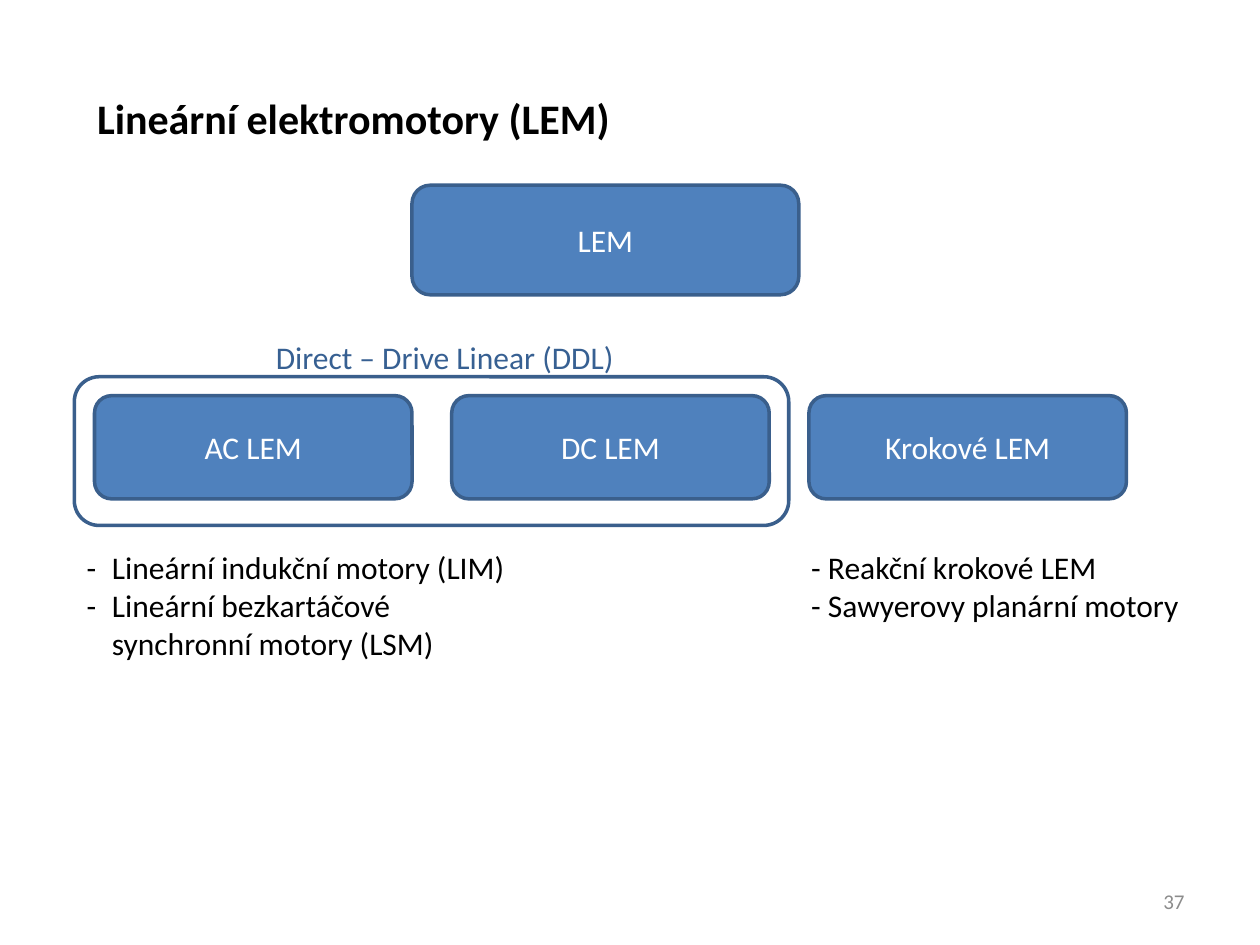
from pptx import Presentation, util as u
from pptx.dml.color import RGBColor
from pptx.enum import shapes, text

WIDE, HIGH = u.Inches(10), u.Inches(7.5)
FONT = "Calibri"
BLUE, EDGE, LABEL = "4F81BD", "3A5F8C", "376092"
BLACK, WHITE, GREY = "000000", "FFFFFF", "8C8C8C"
LEFT, STEP = 7.5, 28.35
MID = text.MSO_ANCHOR.MIDDLE
ALIGN = text.PP_ALIGN


def tint(code):
    return RGBColor.from_string(code)


def area(x, y, w, h):
    return (round(WIDE * x / 100), round(HIGH * y / 100),
            round(WIDE * w / 100), round(HIGH * h / 100))


def apply(item, form):
    for name, value in form.items():
        setattr(item, name, value)


def write(shape, lines, size=18, color=BLACK, bold=False,
          align=ALIGN.LEFT, anchor=text.MSO_ANCHOR.TOP, hang=0):
    frame = shape.text_frame
    apply(frame, {"word_wrap": True, "auto_size": text.MSO_AUTO_SIZE.NONE,
                  "vertical_anchor": anchor})
    for i, line in enumerate(lines):
        para = frame.add_paragraph() if i else frame.paragraphs[0]
        para.alignment = align
        if hang:
            props = para._p.get_or_add_pPr()
            props.set("marL", str(u.Inches(hang)))
            props.set("indent", str(-u.Inches(hang)))
        run = para.add_run()
        run.text = line
        apply(run.font, {"name": FONT, "size": u.Pt(size), "bold": bold})
        run.font.color.rgb = tint(color)


def head(slide, line, spot):
    title = slide.shapes.title
    apply(title, dict(zip(("left", "top", "width", "height"), area(*spot))))
    write(title, [line], size=24, bold=True)


def note(slide, lines, spot, **form):
    write(slide.shapes.add_textbox(*area(*spot)), lines, **form)


def box(slide, spot, label=None):
    shape = slide.shapes.add_shape(
        shapes.MSO_SHAPE.ROUNDED_RECTANGLE, *area(*spot))
    shape.shadow.inherit = False
    shape.line.color.rgb = tint(EDGE)
    shape.line.width = u.Pt(2)
    if label:
        shape.fill.solid()
        shape.fill.fore_color.rgb = tint(BLUE)
        write(shape, [label], color=WHITE, align=ALIGN.CENTER, anchor=MID)
    else:
        shape.fill.background()


def main():
    deck = Presentation()
    apply(deck, {"slide_width": WIDE, "slide_height": HIGH})
    slide = deck.slides.add_slide(deck.slide_layouts[5])
    note(slide, ["37"], (71.7, 92.67, 23.3, 5.33), size=12, color=GREY,
         align=ALIGN.RIGHT, anchor=MID)
    head(slide, "Lineární elektromotory (LEM)", (6.7, 9.07, 88.2, 6.67))
    box(slide, (32.7, 19.6, 30.7, 11.6), "LEM")
    for i, kind in enumerate(("AC LEM", "DC LEM", "Krokové LEM")):
        box(slide, (LEFT + i * STEP, 41.87, 25.2, 10.93), kind)
    box(slide, (5.9, 39.87, 2 * STEP, 15.73))
    note(slide, ["Direct – Drive Linear (DDL)"], (20.9, 35.07, 31.1, 5.33),
         color=LABEL)
    note(slide, ["-\tLineární indukční motory (LIM)",
                 "-\tLineární bezkartáčové synchronní motory (LSM)"],
         (5.9, 57.33, 35.4, 13.47), hang=0.2)
    note(slide, ["- Reakční krokové LEM", "- Sawyerovy planární motory"],
         (63.4, 57.33, 32.3, 9.47))
    deck.save("out.pptx")


if __name__ == "__main__":
    main()
